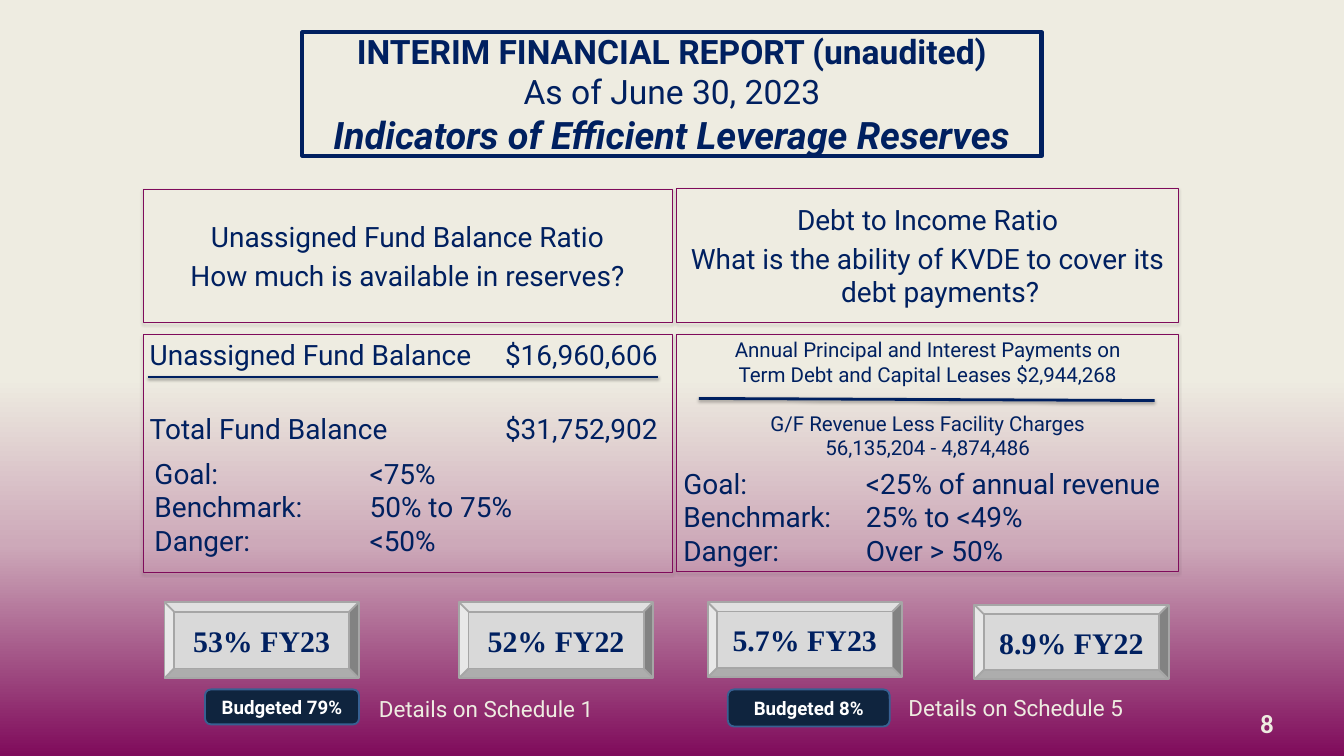
from dataclasses import dataclass

from lxml import etree
from pptx import Presentation
from pptx import util as u
from pptx.dml.color import RGBColor
from pptx.enum import shapes, text
from pptx.oxml import parse_xml
from pptx.oxml.ns import nsdecls, qn
from pptx.util import Cm, Pt


@dataclass(frozen=True)
class Theme:
    navy: RGBColor = RGBColor(0x00, 0x20, 0x60)
    plum: RGBColor = RGBColor(0x7F, 0x0B, 0x5B)
    cream: RGBColor = RGBColor(0xEE, 0xEC, 0xE1)
    rose: RGBColor = RGBColor(0xCD, 0xA9, 0xB9)
    plate: RGBColor = RGBColor(0xD9, 0xD9, 0xD9)
    plate_edge: RGBColor = RGBColor(0xA6, 0xA6, 0xA6)
    badge: RGBColor = RGBColor(0x0F, 0x24, 0x3E)
    badge_edge: RGBColor = RGBColor(0x37, 0x60, 0x92)
    white: RGBColor = RGBColor(0xFF, 0xFF, 0xFF)
    body: int = 30
    small: int = 22
    ratio: int = 32
    label: int = 20
    note: int = 24
    number: int = 28


theme = Theme()
LEFT, CENTER, RIGHT = text.PP_ALIGN.LEFT, text.PP_ALIGN.CENTER, text.PP_ALIGN.RIGHT
RECT = shapes.MSO_SHAPE.RECTANGLE


def write(box, lines, size, color=theme.navy, align=LEFT, bold=False, font="Roboto", tab=None):
    """Fill a box with one paragraph per line; tab is an optional (cm, alignment) stop."""
    frame = box.text_frame
    frame.word_wrap = True
    frame.text = "\n".join(lines)
    for para in frame.paragraphs:
        para.alignment = align
        if tab:
            stops = etree.SubElement(para._p.get_or_add_pPr(), qn("a:tabLst"))
            etree.SubElement(stops, qn("a:tab"), pos=str(Cm(tab[0])), algn=tab[1])
        for span in para.runs:
            span.font.name, span.font.size, span.font.bold = font, Pt(size), bold
            span.font.color.rgb = color
    return frame


def cast_shadow(properties):
    """Add the soft shadow that falls straight down."""
    properties.append(parse_xml(
        f'<a:effectLst {nsdecls("a")}><a:outerShdw blurRad="{Pt(3.1)}" dist="{Pt(1.8)}" '
        'dir="5400000" rotWithShape="0"><a:srgbClr val="000000"><a:alpha val="35000"/>'
        '</a:srgbClr></a:outerShdw></a:effectLst>'))


deck = Presentation()
deck.slide_width, deck.slide_height = u.Inches(20), u.Inches(11.25)
page = deck.slides.add_slide(deck.slide_layouts[6])

# Background: cream down to the middle, then rose and plum
backdrop = page.background.fill
backdrop.gradient()
gradient = page.background._cSld.find(".//" + qn("a:gradFill"))
for child in list(gradient):
    gradient.remove(child)
stops = etree.SubElement(gradient, qn("a:gsLst"))
for percent, color in ((50, theme.cream), (72, theme.rose), (100, theme.plum)):
    stop = etree.SubElement(stops, qn("a:gs"), pos=str(percent * 1000))
    etree.SubElement(stop, qn("a:srgbClr"), val=str(color))
etree.SubElement(gradient, qn("a:lin"), ang="5400000", scaled="0")

# Title
title = page.shapes.add_shape(RECT, Cm(11.43), Cm(1.22), Cm(27.94), Cm(4.67))
title.shadow.inherit = False
title.fill.background()
title.line.color.rgb, title.line.width = theme.navy, Pt(4.5)
frame = write(title, ["INTERIM FINANCIAL REPORT (unaudited)\vAs of June 30, 2023\v"
                      "Indicators of Efficient Leverage Reserves"], 36, align=CENTER)
frame.margin_left = frame.margin_right = frame.margin_top = frame.margin_bottom = 0
frame.vertical_anchor = text.MSO_ANCHOR.MIDDLE
heading, date, subject = frame.paragraphs[0].runs
heading.font.bold = subject.font.bold = subject.font.italic = True
subject.font.size = Pt(40.5)

# Panels: questions above, figures below; they show the slide background
panels = []
for left, top, width, height in ((5.41, 7.16, 19.99, 5.03), (25.58, 7.11, 18.97, 5.08),
                                 (5.41, 12.65, 19.99, 8.99), (25.58, 12.62, 18.97, 8.99)):
    panel = page.shapes.add_shape(RECT, Cm(left), Cm(top), Cm(width), Cm(height))
    panel.element.set("useBgFill", "1")
    panel.line.color.rgb, panel.line.width = theme.plum, Pt(0.75)
    cast_shadow(panel.element.spPr)
    panels.append(panel)

questions = (("Unassigned Fund Balance Ratio", "How much is available in reserves?"),
             ("Debt to Income Ratio",
              "What is the ability of KVDE to cover its debt payments?"))
for panel, lines in zip(panels, questions):
    frame = write(panel, lines, theme.body, align=CENTER)
    frame.vertical_anchor = text.MSO_ANCHOR.MIDDLE
    for para in frame.paragraphs:
        para.space_before = Pt(6)
        indent = para._p.get_or_add_pPr()
        indent.set("marL", str(Cm(0.95)))
        indent.set("indent", str(Cm(-0.95)))

balances = write(panels[2], ["Unassigned Fund Balance\t$16,960,606",
                             "Total Fund Balance\t$31,752,902"],
                 theme.body, tab=(19.2, "r"))
balances.paragraphs[1].space_before = Pt(43)
debt = write(panels[3], ["Annual Principal and Interest Payments on",
                         "Term Debt and Capital Leases $2,944,268",
                         "G/F Revenue Less Facility Charges",
                         "56,135,204 - 4,874,486"], theme.small, align=CENTER)
debt.paragraphs[2].space_before = Pt(26)
for frame in (balances, debt):
    frame.vertical_anchor = text.MSO_ANCHOR.TOP

# Ratio plates and budget badges
plate_style = (shapes.MSO_SHAPE.BEVEL, theme.plate, theme.plate_edge,
               theme.ratio, theme.navy, "Times New Roman")
badge_style = (shapes.MSO_SHAPE.ROUNDED_RECTANGLE, theme.badge, theme.badge_edge,
               theme.label, theme.white, "Roboto")
for style, label, left, top, width, height in (
        (plate_style, "53% FY23", 6.22, 22.76, 7.34, 2.87),
        (plate_style, "52% FY22", 17.35, 22.76, 7.34, 2.87),
        (plate_style, "5.7% FY23", 26.75, 22.76, 7.34, 2.84),
        (plate_style, "8.9% FY22", 36.83, 22.86, 7.34, 2.82),
        (badge_style, "Budgeted 79%", 7.75, 26.06, 5.82, 1.32),
        (badge_style, "Budgeted 8%", 27.51, 26.06, 6.12, 1.4)):
    preset, fill, edge, size, color, font = style
    box = page.shapes.add_shape(preset, Cm(left), Cm(top), Cm(width), Cm(height))
    box.shadow.inherit = False
    box.fill.solid()
    box.fill.fore_color.rgb = fill
    box.line.color.rgb, box.line.width = edge, Pt(2)
    frame = write(box, [label], size, color, CENTER, True, font)
    frame.vertical_anchor = text.MSO_ANCHOR.MIDDLE

# Fraction bars
for x1, y1, x2, y2 in ((5.59, 14.25, 24.87, 14.25), (26.42, 15.06, 43.64, 15.14)):
    bar = page.shapes.add_connector(shapes.MSO_CONNECTOR.STRAIGHT,
                                    Cm(x1), Cm(y1), Cm(x2), Cm(y2))
    bar.line.color.rgb, bar.line.width = theme.navy, Pt(3)
    cast_shadow(bar.element.spPr)

# Thresholds
for left, top, width, stop, levels in (
        (5.59, 17.12, 19.99, 8.13, ("<75%", "50% to 75%", "<50%")),
        (25.58, 17.5, 19.05, 6.9, ("<25% of annual revenue", "25% to <49%", "Over > 50%"))):
    box = page.shapes.add_textbox(Cm(left), Cm(top), Cm(width), Cm(4.11))
    names = ("Goal:", "Benchmark:", "Danger:")
    write(box, [f"{name}\t{level}" for name, level in zip(names, levels)],
          theme.body, tab=(stop, "l"))

# Schedule notes and slide number
for schedule, left, top, width in ((1, 14.07, 26.16, 8.84), (5, 34.09, 26.11, 9.73)):
    box = page.shapes.add_textbox(Cm(left), Cm(top), Cm(width), Cm(1.27))
    write(box, [f"Details on Schedule {schedule}"], theme.note, theme.cream)

number = page.shapes.add_textbox(Cm(47.07), Cm(26.72), Cm(1.07), Cm(1.19))
frame = write(number, ["8"], theme.number, theme.cream, RIGHT, True, "Calibri")
frame.margin_left = frame.margin_right = frame.margin_top = frame.margin_bottom = 0

deck.save("out.pptx")
